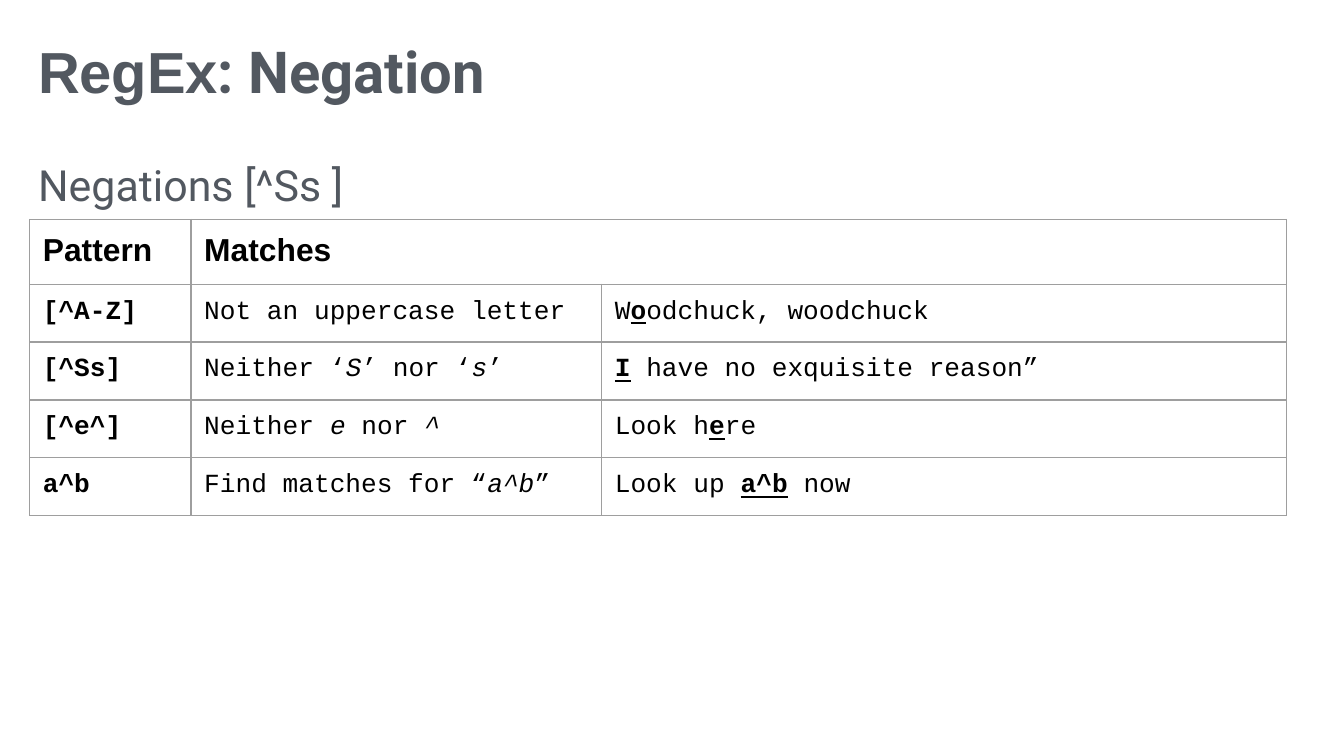
from lxml import etree
from pptx import Presentation
from pptx.dml.color import RGBColor
from pptx.enum.text import MSO_ANCHOR
from pptx.oxml.ns import qn
from pptx.util import Cm, Pt

TOP = MSO_ANCHOR.TOP
SLATE, BLACK, GREY = "525860", "000000", "9E9E9E"
PLAIN, ITALIC, HIT = "plain", "italic", "hit"

# Content: each text is a list of (words, style) spans
TITLE = [("RegEx", "Arial"), (": Negation", "Roboto")]
SUBTITLE = "Negations [^Ss ]"
HEADERS = ["Pattern", "Matches"]
ROWS = [
    ("[^A-Z]",
     [("Not an uppercase letter", PLAIN)],
     [("W", PLAIN), ("o", HIT), ("odchuck, woodchuck", PLAIN)]),
    ("[^Ss]",
     [("Neither ‘", PLAIN), ("S", ITALIC), ("’ nor ‘", PLAIN), ("s", ITALIC), ("’", PLAIN)],
     [("I", HIT), (" have no exquisite reason”", PLAIN)]),
    ("[^e^]",
     [("Neither ", PLAIN), ("e", ITALIC), (" nor ", PLAIN), ("^", ITALIC)],
     [("Look h", PLAIN), ("e", HIT), ("re", PLAIN)]),
    ("a^b",
     [("Find matches for “", PLAIN), ("a^b", ITALIC), ("”", PLAIN)],
     [("Look up ", PLAIN), ("a^b", HIT), (" now", PLAIN)]),
]

# Layout in centimetres
LEFT = 0.56
COLUMN_WIDTHS = [3.05, 7.76, 12.94]
ROW_HEIGHT = 1.07
TEXT_INSET, CELL_INSET = 0.16, 0.25


def color(value):
    return RGBColor.from_string(value)


def set_font(font, size, ink, name=None, bold=None):
    font.size, font.bold = Pt(size), bold
    font.color.rgb = color(ink)
    if name:
        font.name = name


def add_text(slide, top, width, height):
    box = slide.shapes.add_textbox(Cm(LEFT), Cm(top), Cm(width), Cm(height))
    frame = box.text_frame
    frame.word_wrap, frame.vertical_anchor = True, TOP
    frame.margin_left = frame.margin_right = Cm(TEXT_INSET)
    frame.margin_top = frame.margin_bottom = Cm(TEXT_INSET)
    return frame.paragraphs[0]


def format_cell(cell):
    cell.margin_left = cell.margin_right = Cm(CELL_INSET)
    cell.margin_top = cell.margin_bottom = Cm(CELL_INSET)
    properties = cell._tc.get_or_add_tcPr()
    for side in ("lnL", "lnR", "lnT", "lnB"):
        line = etree.SubElement(properties, qn(f"a:{side}"), w=str(Pt(0.75)))
        fill = etree.SubElement(line, qn("a:solidFill"))
        etree.SubElement(fill, qn("a:srgbClr"), val=GREY)
    cell.fill.background()


def write_spans(para, spans):
    set_font(para.font, 14, BLACK, "Courier New", False)
    for words, style in spans:
        span = para.add_run()
        span.text = words
        if style == ITALIC:
            span.font.italic = True
        elif style == HIT:
            span.font.bold = span.font.underline = True


deck = Presentation()
deck.slide_width, deck.slide_height = Cm(25.4), Cm(14.29)
slide = deck.slides.add_slide(deck.slide_layouts[6])

# Title and subtitle
para = add_text(slide, 0.51, 24.2, 1.24)
set_font(para.font, 31, SLATE, bold=True)
for words, name in TITLE:
    span = para.add_run()
    span.text, span.font.name = words, name

para = add_text(slide, 2.69, 23.75, 1.4)
para.text, para.line_spacing = SUBTITLE, 1.15
set_font(para.font, 23, SLATE, "Roboto")

# Pattern table
row_count = len(ROWS) + 1
table = slide.shapes.add_table(
    row_count, len(COLUMN_WIDTHS), Cm(LEFT), Cm(4.15),
    Cm(sum(COLUMN_WIDTHS)), Cm(ROW_HEIGHT * row_count)).table
table.first_row = table.horz_banding = False
for column, width in zip(table.columns, COLUMN_WIDTHS):
    column.width = Cm(width)
for row in table.rows:
    row.height = Cm(ROW_HEIGHT)
for cell in table.iter_cells():
    format_cell(cell)

# Header row: the second heading covers two columns
table.cell(0, 1).merge(table.cell(0, 2))
for index, heading in enumerate(HEADERS):
    para = table.cell(0, index).text_frame.paragraphs[0]
    para.text = heading
    set_font(para.font, 17, BLACK, "Arial", True)

# Body rows
for row_index, (pattern, meaning, example) in enumerate(ROWS, start=1):
    for index, spans in enumerate([[(pattern, PLAIN)], meaning, example]):
        para = table.cell(row_index, index).text_frame.paragraphs[0]
        write_spans(para, spans)
        if index == 0:
            para.font.bold = True

deck.save("out.pptx")
